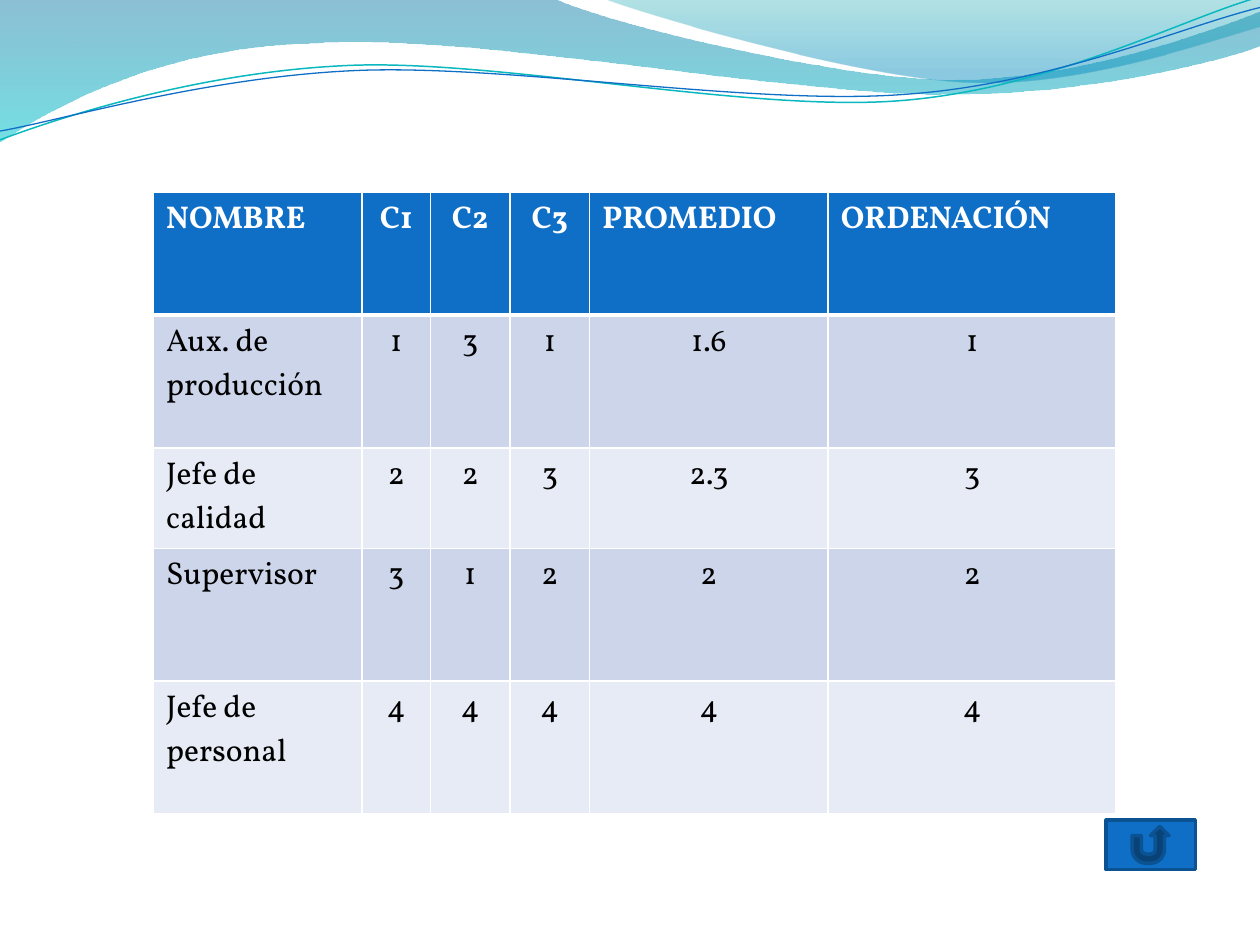
from math import cos, radians, sin

from lxml import etree
from pptx import Presentation
from pptx.dml.color import RGBColor
from pptx.enum.shapes import MSO_SHAPE
from pptx.enum.text import PP_ALIGN
from pptx.oxml.ns import qn
from pptx.util import Pt

FONT = "Vollkorn"
COLORS = {
    "blue": "0F6FC6", "dark_blue": "0B5292", "teal": "0AB8BF",
    "band_dark": "CCD5EA", "band_light": "E7EBF5",
    "white": "FFFFFF", "black": "000000",
    "wave_blue": "0074A1", "wave_aqua": "00C6CF",
    "crest_teal": "00A1A9", "crest_blue": "008BBF",
}

# Outlines: a start point, then segments of one point (line) or three (curve)
WAVE = [(0, 0), [(316.8, -0.7)],
        [(342.7, 12.2), (478.1, 45.4), (545.8, 45.4)],
        [(614.2, 45.4), (689.8, 18.7), (720, 6.5)],
        [(720.7, 25.9)],
        [(707.8, 31.7), (626.4, 54.7), (537.1, 54)],
        [(447.8, 54), (275, 20.2), (185, 24.5)],
        [(92.9, 25.9), (33.1, 59.8), (-0.7, 81.4)]]
CREST = [(344.9, -0.7),
         [(366.5, 7.9), (491, 44.6), (553.7, 46.8)],
         [(617, 49.7), (691.9, 23), (720, 15.1)],
         [(720, 0)]]
TEAL_LINE = [(0, 79.9),
             [(34.6, 67), (113.8, 41), (199.4, 37.4)],
             [(284.4, 33.8), (427, 64.1), (513.4, 57.6)],
             [(599.8, 51.1), (675.4, 10.8), (718.6, -1.4)]]
BLUE_LINE = [(0, 74.9),
             [(33.8, 69.1), (118.1, 43.9), (203.8, 40.3)],
             [(290.2, 36.7), (429.8, 60.5), (516.2, 54)],
             [(601.9, 48.2), (675.4, 15.1), (720, 4.3)]]
LINE_TILT = -2.7

COLUMN_WIDTHS = [119.1, 39.1, 45.5, 45.5, 136.3, 164.6]
ROW_HEIGHTS = [70, 75.9, 43.9, 75.9, 75.9]
ROWS = [
    ["NOMBRE", "C1", "C2", "C3", "PROMEDIO", "ORDENACIÓN"],
    ["Aux. de producción", "1", "3", "1", "1.6", "1"],
    ["Jefe de calidad", "2", "2", "3", "2.3", "3"],
    ["Supervisor", "3", "1", "2", "2", "2"],
    ["Jefe de personal", "4", "4", "4", "4", "4"],
]


def rgb(name):
    return RGBColor.from_string(COLORS[name])


def write_text(frame, text, size=18, color="black", bold=False, align=PP_ALIGN.LEFT):
    paragraph = frame.paragraphs[0]
    paragraph.alignment = align
    run = paragraph.add_run()
    run.text = text
    font = run.font
    font.name, font.size, font.bold = FONT, Pt(size), bold
    font.color.rgb = rgb(color)


def add_color(parent, name, alpha=None):
    color = etree.SubElement(parent, qn("a:srgbClr"), val=COLORS[name])
    if alpha is not None:
        etree.SubElement(color, qn("a:alpha"), val=str(alpha * 1000))


def fill_gradient(shape, stops):
    """Vertical gradient; each stop is position, colour and opacity in percent."""
    shape.fill.background()
    properties = shape.element.spPr
    gradient = etree.Element(qn("a:gradFill"), rotWithShape="1")
    stop_list = etree.SubElement(gradient, qn("a:gsLst"))
    for position, name, alpha in stops:
        stop = etree.SubElement(stop_list, qn("a:gs"), pos=str(position * 1000))
        add_color(stop, name, alpha)
    etree.SubElement(gradient, qn("a:lin"), ang="5400000", scaled="0")
    properties.replace(properties.find(qn("a:noFill")), gradient)


def turn(point, center, angle):
    """Turn a point clockwise about a center."""
    c, s = cos(radians(angle)), sin(radians(angle))
    dx, dy = point[0] - center[0], point[1] - center[1]
    return center[0] + c * dx - s * dy, center[1] + s * dx + c * dy


def add_outline(slide, outline, left, top, close=False, tilt=0, center=(0, 0)):
    """Freeform with true curves; a tilted one is built level, then rotated."""
    start, *segments = outline
    points = [start] + [point for segment in segments for point in segment]
    level = [turn(point, center, -tilt) for point in points]
    placed = [(Pt(left + x), Pt(top + y)) for x, y in level]
    builder = slide.shapes.build_freeform(*placed[0])
    builder.add_line_segments(placed[1:], close=close)
    shape = builder.convert_to_shape()
    shape.shadow.inherit = False
    shape.rotation = tilt % 360
    # Join each three control points into one curve
    lines = shape.element.spPr.iter(qn("a:lnTo"))
    lines = iter(list(lines))
    for segment in segments:
        first, *others = [next(lines) for _ in segment]
        if others:
            first_point = first[0]
            curve = etree.Element(qn("a:cubicBezTo"))
            first.getparent().replace(first, curve)
            curve.append(first_point)
            for line in others:
                curve.append(line[0])
                line.getparent().remove(line)
    return shape


def add_wave_header(slide, left, top):
    # Filled waves
    for outline, stops in (
        (WAVE, [(0, "wave_blue", 45), (100, "wave_aqua", 55)]),
        (CREST, [(0, "crest_teal", 30), (80, "crest_blue", 45)]),
    ):
        shape = add_outline(slide, outline, left, top, close=True)
        fill_gradient(shape, stops)
        shape.line.fill.background()
    # Thin tilted lines
    for outline, center, color, width in (
        (TEAL_LINE, (359.3, 41.4), "teal", 0.85),
        (BLUE_LINE, (359.6, 42.5), "blue", 0.75),
    ):
        shape = add_outline(slide, outline, left, top, tilt=LINE_TILT, center=center)
        shape.fill.background()
        shape.line.color.rgb = rgb(color)
        shape.line.width = Pt(width)


def set_borders(cell, top, bottom):
    properties = cell._tc.get_or_add_tcPr()
    for side, width in (("L", 1), ("R", 1), ("T", top), ("B", bottom)):
        line = etree.SubElement(properties, qn(f"a:ln{side}"), w=str(Pt(width)))
        add_color(etree.SubElement(line, qn("a:solidFill")), "white")


def add_ranking_table(slide, left, top):
    frame = slide.shapes.add_table(
        len(ROWS), len(COLUMN_WIDTHS), Pt(left), Pt(top),
        Pt(sum(COLUMN_WIDTHS)), Pt(sum(ROW_HEIGHTS)))
    table = frame.table
    for column, width in zip(table.columns, COLUMN_WIDTHS):
        column.width = Pt(width)
    for row, height in zip(table.rows, ROW_HEIGHTS):
        row.height = Pt(height)
    for r, values in enumerate(ROWS):
        header = r == 0
        fill = "blue" if header else ("band_light", "band_dark")[r % 2]
        for c, value in enumerate(values):
            cell = table.cell(r, c)
            set_borders(cell, top=3 if r == 1 else 1, bottom=3 if header else 1)
            cell.fill.solid()
            cell.fill.fore_color.rgb = rgb(fill)
            left_aligned = c == 0 or (header and c > 3)
            write_text(cell.text_frame, value, bold=header,
                       color="white" if header else "black",
                       align=PP_ALIGN.LEFT if left_aligned else PP_ALIGN.CENTER)


def add_return_button(slide, left, top, width, height):
    button = slide.shapes.add_shape(
        MSO_SHAPE.ACTION_BUTTON_RETURN, Pt(left), Pt(top), Pt(width), Pt(height))
    button.shadow.inherit = False
    button.fill.solid()
    button.fill.fore_color.rgb = rgb("blue")
    button.line.color.rgb = rgb("dark_blue")
    button.line.width = Pt(2)


def main():
    presentation = Presentation()
    presentation.slide_width, presentation.slide_height = Pt(720), Pt(540)
    slide = presentation.slides.add_slide(presentation.slide_layouts[6])
    add_wave_header(slide, 0, 0)
    add_ranking_table(slide, 87.8, 110)
    add_return_button(slide, 632, 468.7, 51, 28.1)
    presentation.save("out.pptx")


if __name__ == "__main__":
    main()
